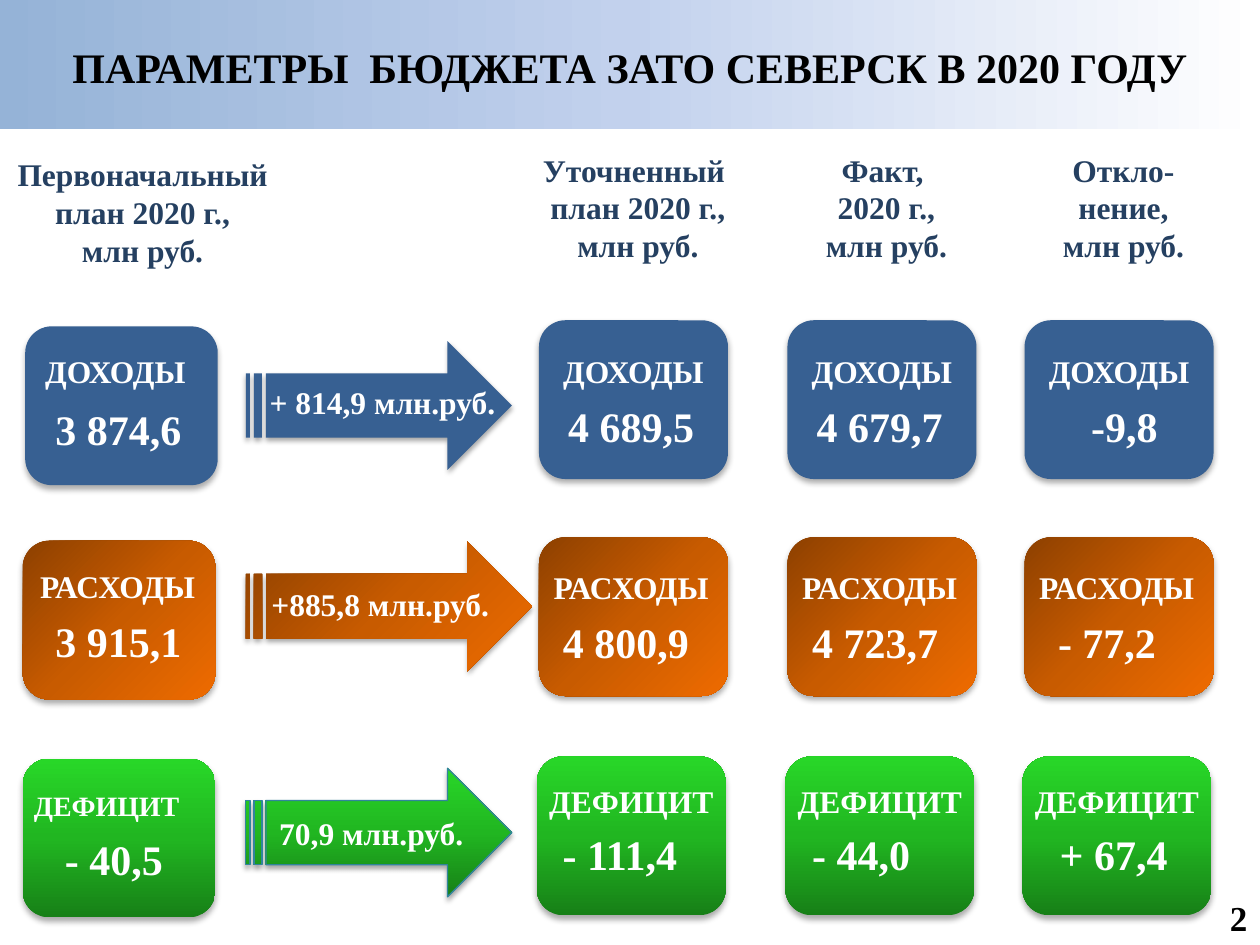
from lxml import etree
from pptx import Presentation
from pptx import util as u
from pptx.dml.color import RGBColor
from pptx.enum import shapes, text
from pptx.oxml import ns

COLORS = {
    "blue": "376092", "navy": "254061", "teal": "31859C", "white": "FFFFFF", "black": "000000",
    "band": ("95B3D7", "C2D1ED", "FFFFFF"),
    "orange": ("8D4000", "C85B00", "EE6B00"),
    "green": ("178017", "21B621", "28D728"),
}
ANGLES = {"band": 0, "orange": 45, "green": 270}
CARD_SHADOW = (32, 3.5, 2.2)
ARROW_SHADOW = (35, 3.1, 1.8)
CENTER, LEFT = text.PP_ALIGN.CENTER, text.PP_ALIGN.LEFT
CARD_LEFTS = (308, 450, 585.5)

HEADINGS = [
    (0, 85, 163, ("Первоначальный план 2020 г.,", "млн руб.")),
    (286.5, 82.5, 156, ("Уточненный ", "план 2020 г.,", "млн руб.")),
    (428.5, 82.5, 156, ("Факт, ", "2020 г.,", "млн руб.")),
    (564, 82.5, 156, ("Откло-", "нение,", "млн руб.")),
]

ROWS = [
    dict(name="ДОХОДЫ", fill="blue", label_width=96, inset=6.75, shift=0,
         card_top=183, label_top=197.5, value_top=225.5,
         values=(("4 689,5", 317.5, 87), ("4 679,7", 459.5, 87), ("-9,8", 616.5, 52.5)),
         start=("3 874,6", 24.5, 227, 87), start_card=(14.4, 186.5),
         start_label=(18.7, 197.5, 96, 18),
         arrow=(195, 152, 73.5), line=None, change=("+ 814,9 млн.руб.", 147, 215.5)),
    dict(name="РАСХОДЫ", fill="orange", label_width=104, inset=1.25, shift=0,
         card_top=307, label_top=321, value_top=349,
         values=(("4 800,9", 314.5, 87), ("4 723,7", 457, 87), ("- 77,2", 597.5, 71)),
         start=("3 915,1", 24.5, 348, 87), start_card=(13, 309),
         start_label=(15.8, 320.5, 104, 18),
         arrow=(309.5, 163.5, 74), line=None, change=("+885,8 млн.руб.", 148, 331)),
    dict(name="ДЕФИЦИТ", fill="green", label_width=109.5, inset=0, shift=-1.25,
         card_top=432.25, label_top=443.5, value_top=470,
         values=(("- 111,4", 314.5, 80.5), ("- 44,0", 457, 71), ("+ 67,4", 598.5, 77)),
         start=("- 40,5", 30, 472.5, 71), start_card=(13, 433.5),
         start_label=(12.25, 447, 98.5, 16),
         arrow=(439, 152, 73.5), line="teal", change=("70,9 млн.руб.", 152.5, 461.5)),
]


class BudgetSlide:
    """Holds the text style and the current page, and draws each kind of element."""

    def __init__(self, deck, font="Times New Roman"):
        self.page = deck.slides.add_slide(deck.slide_layouts[6])
        self.font = font

    def shape(self, kind, left, top, width, height, fill, line=None, shadow=None):
        shape = self.page.shapes.add_shape(
            kind, u.Pt(left), u.Pt(top), u.Pt(width), u.Pt(height))
        if fill in ANGLES:
            self.gradient(shape, fill)
        else:
            shape.fill.solid()
            shape.fill.fore_color.rgb = RGBColor.from_string(COLORS[fill])
        if line:
            shape.line.color.rgb = RGBColor.from_string(COLORS[line])
            shape.line.width = u.Pt(0.75)
        else:
            shape.line.fill.background()
        shape.shadow.inherit = False
        if shadow:
            self.shadow(shape, *shadow)

    def gradient(self, shape, name):
        shape.fill.background()
        properties = shape._element.spPr
        gradient = etree.Element(ns.qn("a:gradFill"), rotWithShape="1")
        stops = etree.SubElement(gradient, ns.qn("a:gsLst"))
        for position, color in zip((0, 50000, 100000), COLORS[name]):
            stop = etree.SubElement(stops, ns.qn("a:gs"), pos=str(position))
            etree.SubElement(stop, ns.qn("a:srgbClr"), val=color)
        etree.SubElement(gradient, ns.qn("a:lin"), ang=str(ANGLES[name] * 60000), scaled="0")
        properties.replace(properties.find(ns.qn("a:noFill")), gradient)

    def shadow(self, shape, opacity, blur, distance):
        effects = shape._element.spPr.find(ns.qn("a:effectLst"))
        outer = etree.SubElement(
            effects, ns.qn("a:outerShdw"), blurRad=str(u.Pt(blur)), dist=str(u.Pt(distance)),
            dir="5400000", rotWithShape="0")
        color = etree.SubElement(outer, ns.qn("a:srgbClr"), val=COLORS["black"])
        etree.SubElement(color, ns.qn("a:alpha"), val=str(opacity * 1000))

    def card(self, left, top, width, fill):
        self.shape(shapes.MSO_SHAPE.ROUNDED_RECTANGLE, left, top, width, 90.75, fill,
                   shadow=CARD_SHADOW)

    def text(self, lines, left, top, width, height, size=18, color="white", align=LEFT, wrap=False):
        box = self.page.shapes.add_textbox(u.Pt(left), u.Pt(top), u.Pt(width), u.Pt(height))
        frame = box.text_frame
        frame.word_wrap = wrap
        frame.auto_size = text.MSO_AUTO_SIZE.SHAPE_TO_FIT_TEXT
        for index, line in enumerate(lines):
            para = frame.add_paragraph() if index else frame.paragraphs[0]
            para.alignment = align
            span = para.add_run()
            span.text = line
            span.font.name = self.font
            span.font.size = u.Pt(size)
            span.font.bold = True
            span.font.color.rgb = RGBColor.from_string(COLORS[color])

    def value(self, number, left, top, width):
        self.text([number], left, top, width, 36, size=24)

    def row(self, row):
        name, fill = row["name"], row["fill"]
        self.card(*row["start_card"], 110, fill)
        left, top, width, size = row["start_label"]
        self.text([name], left, top, width, 29, size)
        self.value(*row["start"])

        top, width, height = row["arrow"]
        self.shape(shapes.MSO_SHAPE.STRIPED_RIGHT_ARROW, 140.5, top, width, height, fill,
                   row["line"], ARROW_SHADOW)
        change, left, top = row["change"]
        self.text([change], left, top, 155, 29, wrap=True)

        for card_left, (number, value_left, width) in zip(CARD_LEFTS, row["values"]):
            left = card_left + row["shift"]
            self.card(left, row["card_top"], 108, fill)
            self.text([name], left + row["inset"], row["label_top"], row["label_width"], 29)
            self.value(number, value_left, row["value_top"], width)


def main():
    deck = Presentation()
    deck.slide_width, deck.slide_height = u.Pt(720), u.Pt(540)
    slide = BudgetSlide(deck)
    slide.shape(shapes.MSO_SHAPE.FLOWCHART_PROCESS, -0.5, 0, 720.5, 73.5, "band")
    slide.text(["ПАРАМЕТРЫ  БЮДЖЕТА ЗАТО СЕВЕРСК В 2020 ГОДУ"], 0, 20, 720, 36,
               size=24, color="black", align=CENTER, wrap=True)
    for left, top, width, lines in HEADINGS:
        slide.text(lines, left, top, width, 72.5, color="navy", align=CENTER, wrap=True)
    for row in ROWS:
        slide.row(row)
    slide.text(["2"], 695.5, 508.5, 24.5, 31.5, size=20, color="black", align=CENTER)
    deck.save("out.pptx")


if __name__ == "__main__":
    main()
